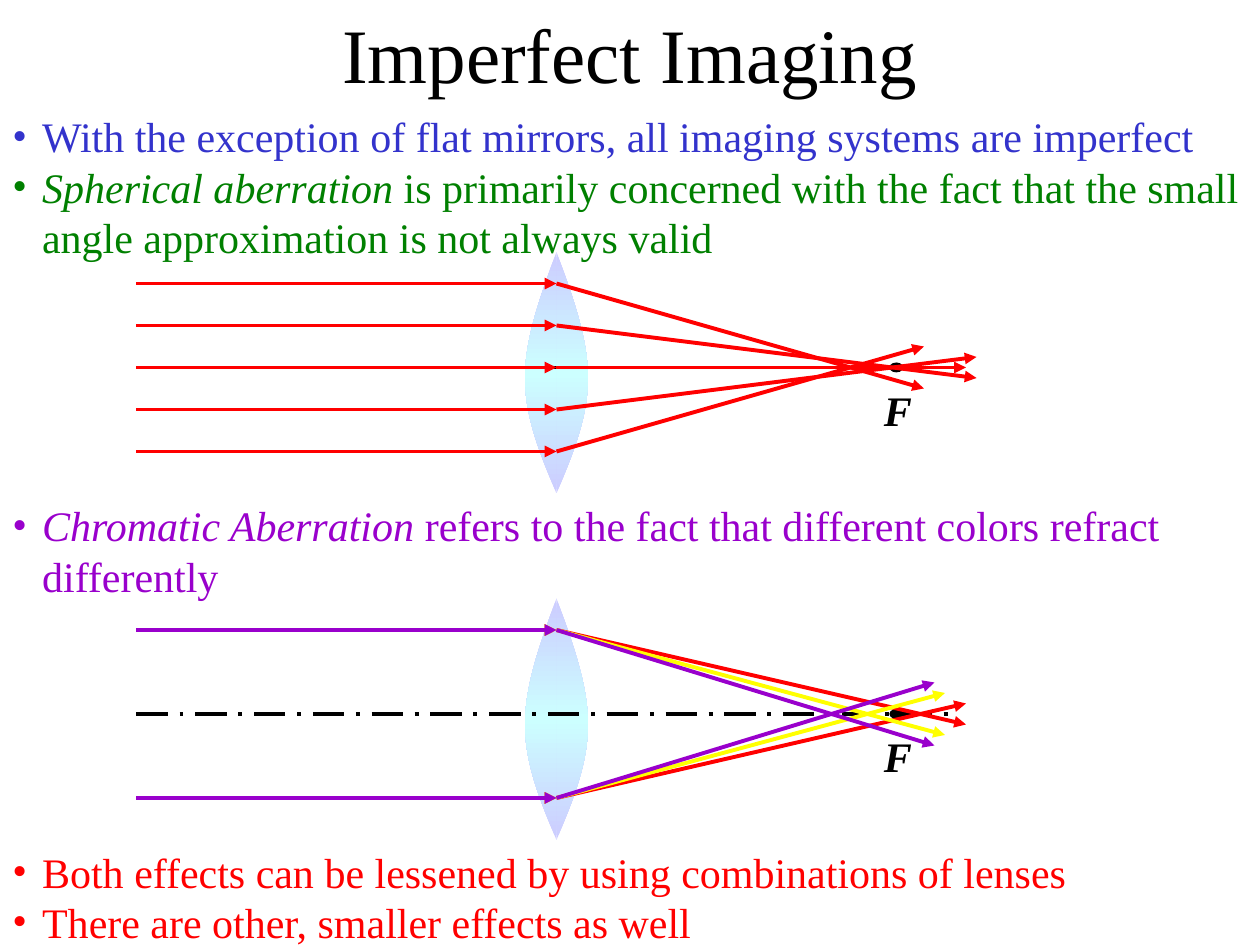
from copy import deepcopy

from lxml import etree
from pptx import Presentation, util as u
from pptx.dml.color import RGBColor
from pptx.enum import dml, shapes, text
from pptx.oxml.ns import qn

BLACK = RGBColor(0, 0, 0)
BLUE = RGBColor(0x33, 0x33, 0xCC)
GREEN = RGBColor(0, 0x80, 0)
RED = RGBColor(0xFF, 0, 0)
YELLOW = RGBColor(0xFF, 0xFF, 0)
PURPLE = RGBColor(0x99, 0, 0xCC)
EDGE = RGBColor(0xCC, 0xCC, 0xFF)
CORE = RGBColor(0xCC, 0xFF, 0xFF)

# The diagrams sit on a grid of twelve cells to the inch
CELL = u.Cm(2.54 / 12)
START, LENS = 13, 53

# Half a lens as two Bezier curves: (distance from lens centre, height below axis)
HALF = [(0, -11), (1.5, -6.9), (3, -2.8), (3, 1), (3, 4.8), (1.5, 8.4), (0, 12)]

prs = Presentation()
prs.slide_width, prs.slide_height = u.Cm(25.4), u.Cm(19.05)
slide = prs.slides.add_slide(prs.slide_layouts[6])


def add_text(box, paras, size=24, bullet=True):
    """Add a text box; paras holds (colour, italic lead, plain rest)."""
    frame = slide.shapes.add_textbox(*[u.Cm(v) for v in box]).text_frame
    frame.word_wrap = True
    frame.auto_size = text.MSO_AUTO_SIZE.SHAPE_TO_FIT_TEXT
    for i, (color, lead, rest) in enumerate(paras):
        para = frame.add_paragraph() if i else frame.paragraphs[0]
        para.font.name, para.font.size = "Times New Roman", u.Pt(size)
        para.font.color.rgb = color
        if lead:
            para.add_run().text = lead
            para.runs[0].font.italic = True
        if rest:
            para.add_run().text = rest
        if bullet:
            props = para._p.get_or_add_pPr()
            props.set("marL", str(u.Cm(0.6)))
            props.set("indent", str(u.Cm(-0.6)))
            for tag, key, value in [("a:buFont", "typeface", "Times New Roman"),
                                    ("a:buChar", "char", "•")]:
                mark = etree.Element(qn(tag), {key: value})
                props.insert_element_before(mark, "a:tabLst", "a:defRPr", "a:extLst")
    return frame.paragraphs[0]


def add_line(x1, y1, x2, y2, color, arrow=True):
    """Add a line between two grid points."""
    line = slide.shapes.add_connector(
        shapes.MSO_CONNECTOR.STRAIGHT, *[v * CELL for v in (x1, y1, x2, y2)])
    line.line.color.rgb = color
    line.line.width = u.Pt(2.25)
    if arrow:
        etree.SubElement(line.line._get_or_add_ln(), qn("a:tailEnd"), type="triangle")
    else:
        line.line.dash_style = dml.MSO_LINE.LONG_DASH_DOT
    etree.SubElement(line._element.spPr, qn("a:effectLst"))


title = add_text((0, 0, 25.4, 2.12), [(BLACK, "", "Imperfect Imaging")], 44, False)
title.alignment = text.PP_ALIGN.CENTER
add_text((0, 2.11, 25.4, 3.3), [
    (BLUE, "", "With the exception of flat mirrors, all imaging systems are imperfect"),
    (GREEN, "Spherical aberration", " is primarily concerned with the fact that "
     "the small angle approximation is not always valid"),
])
add_text((0, 9.95, 25.4, 2.29), [
    (PURPLE, "Chromatic Aberration",
     " refers to the fact that different colors refract differently"),
])
add_text((0, 16.93, 25.4, 2.29), [
    (RED, "", "Both effects can be lessened by using combinations of lenses"),
    (RED, "", "There are other, smaller effects as well"),
])

# Rays: colour, entry height off the axis, end x, end height past the axis
SPHERE = [(RED, 0, 92, 0), (RED, 4, 93, 1), (RED, 8, 88, 2)]
CHROME = [(RED, 8, 92, 1), (YELLOW, 8, 90, 2), (PURPLE, 8, 89, 3)]

for axis, rays in [(35, SPHERE), (68, CHROME)]:
    for side in (-1, 1):
        points = [((LENS + side * x) * CELL, (axis + y) * CELL) for x, y in HALF]
        outline = slide.shapes.build_freeform(*points[0])
        outline.add_line_segments(points[1:], close=False)
        half = outline.convert_to_shape()
        # Turn each three straight segments into one Bezier curve
        legs = list(half._element.iter(qn("a:lnTo")))
        for i in range(0, len(legs), 3):
            curve = etree.Element(qn("a:cubicBezTo"))
            legs[i].addprevious(curve)
            for leg in legs[i:i + 3]:
                curve.append(leg[0])
                leg.getparent().remove(leg)
        half.shadow.inherit = False
        half.line.fill.background()
        half.fill.gradient()
        half.fill.gradient_angle = 90
        first = half.fill.gradient_stops[0]._gs
        first.addnext(deepcopy(first))
        for stop, place, color in zip(half.fill.gradient_stops, (0, 0.5, 1),
                                      (EDGE, CORE, EDGE)):
            stop.position = place
            stop.color.rgb = color

    add_line(START, axis, 91, axis, BLACK, arrow=False)
    focus = slide.shapes.add_shape(
        shapes.MSO_SHAPE.OVAL, u.Cm(17.93), axis * CELL - u.Cm(0.1),
        u.Cm(0.28), u.Cm(0.2))
    focus.shadow.inherit = False
    focus.fill.solid()
    focus.fill.fore_color.rgb = BLACK
    focus.line.fill.background()
    label = add_text((17.57, axis * 2.54 / 12 + 0.21, 1.7, 1.27),
                     [(BLACK, "F", "")], bullet=False)
    label.font.bold = True

    for color, height, end, past in rays:
        for sign in (-1, 1) if height else (1,):
            y = axis + sign * height
            add_line(START, y, LENS, y, color)
            add_line(LENS, y, end, axis - sign * past, color)

prs.save("out.pptx")
